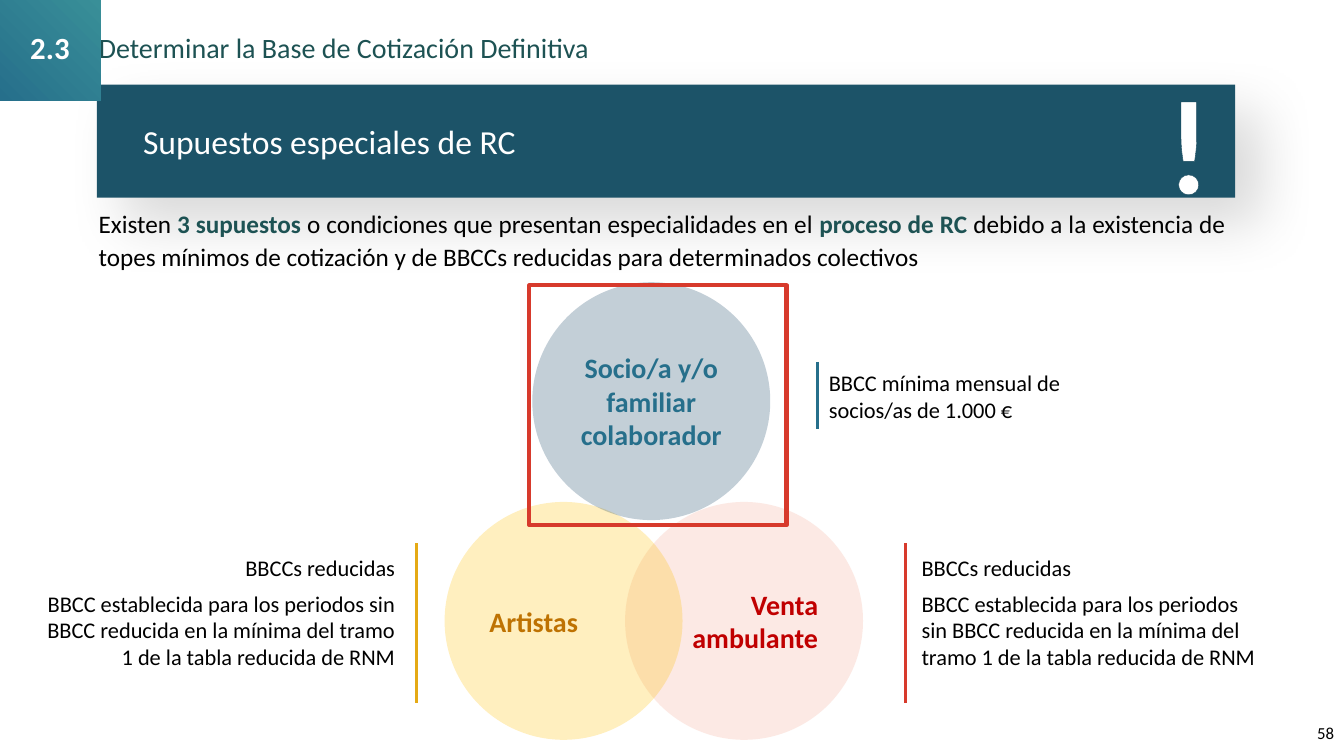
from lxml.etree import SubElement
from pptx import Presentation
from pptx.dml.color import RGBColor
from pptx.enum.shapes import MSO_CONNECTOR, MSO_SHAPE
from pptx.enum.text import MSO_ANCHOR, MSO_AUTO_SIZE, PP_ALIGN
from pptx.oxml import parse_xml
from pptx.oxml.ns import nsdecls, qn
from pptx.util import Inches, Pt

BLACK = RGBColor(0x00, 0x00, 0x00)
WHITE = RGBColor(0xFF, 0xFF, 0xFF)
GREEN = RGBColor(0x1D, 0x52, 0x53)
NAVY = RGBColor(0x1C, 0x53, 0x68)
BLUE = RGBColor(0x26, 0x6F, 0x8B)
TEAL = RGBColor(0x39, 0x8F, 0x98)
RED = RGBColor(0xD7, 0x3A, 0x2C)
GOLD = RGBColor(0xE5, 0xAA, 0x15)
INK = RGBColor(0x12, 0x41, 0x63)
AMBER = RGBColor(0xFF, 0xC0, 0x00)
ROSE = RGBColor(0xF4, 0xAA, 0x96)
BROWN = RGBColor(0xBE, 0x72, 0x02)
WINE = RGBColor(0xC0, 0x00, 0x00)

LEFT, MID, RIGHT = PP_ALIGN.LEFT, PP_ALIGN.CENTER, PP_ALIGN.RIGHT
SIDES = ("margin_left", "margin_top", "margin_right", "margin_bottom")
FLUSH = dict.fromkeys(SIDES, 0)


def apply(item, values):
    for name, value in values.items():
        setattr(item, name, value)


def write(shape, paras, size, align=LEFT, para=None, frame=None):
    area = shape.text_frame
    apply(area, {"word_wrap": True, "auto_size": MSO_AUTO_SIZE.NONE,
                 "vertical_anchor": MSO_ANCHOR.TOP, **(frame or {})})
    for index, runs in enumerate(paras):
        line = area.add_paragraph() if index else area.paragraphs[0]
        apply(line, {"alignment": align, **(para or {})})
        for words, color, bold in runs:
            run = line.add_run()
            run.text = words
            apply(run.font, {"name": "Calibri", "size": Pt(size), "bold": bold})
            run.font.color.rgb = color
    return shape


def label(slide, box, *args, **kwargs):
    shape = slide.shapes.add_textbox(*map(Inches, box))
    return write(shape, *args, **kwargs)


def block(slide, kind, box, color=None):
    shape = slide.shapes.add_shape(kind, *map(Inches, box))
    shape.shadow.inherit = False
    shape.line.fill.background()
    if color is None:
        shape.fill.background()
    else:
        shape.fill.solid()
        shape.fill.fore_color.rgb = color
    return shape


def badge(slide, x, y, w, h):
    half, slant, cut = h / 2, w * 0.21, 0.13
    tips = [(x + slant, y), (x + w - slant, y), (x + w, y + half),
            (x + w - slant, y + h), (x + slant, y + h), (x, y + half)]
    dots = []
    for index, tip in enumerate(tips):
        back, ahead = tips[index - 1], tips[(index + 1) % 6]
        start = [t + (b - t) * cut for t, b in zip(tip, back)]
        stop = [t + (a - t) * cut for t, a in zip(tip, ahead)]
        for step in range(7):
            k = step / 6
            dots.append([(1 - k) ** 2 * s + 2 * k * (1 - k) * t + k * k * e
                         for s, t, e in zip(start, tip, stop)])
    form = slide.shapes.build_freeform(*dots[0], scale=Inches(1))
    form.add_line_segments(dots[1:], close=True)
    shape = form.convert_to_shape()
    shape.shadow.inherit = False
    shape.line.fill.background()
    shape.fill.gradient()
    for stop, color in zip(shape.fill.gradient_stops, (BLUE, TEAL)):
        stop.color.rgb = color
    grad = shape._element.spPr.find(qn("a:gradFill"))
    grad.replace(grad.find(qn("a:lin")), parse_xml(
        f'<a:path {nsdecls("a")} path="circle">'
        '<a:fillToRect t="100000" r="100000"/></a:path>'))
    label(slide, (x + 0.09, y + 0.24, 0.65, 0.3), [[("2.3", WHITE, True)]], 22, MID,
          {"line_spacing": 0.8},
          {"margin_top": 0, "margin_bottom": 0, "vertical_anchor": MSO_ANCHOR.MIDDLE})


def header(slide, x, y, w, h):
    title = slide.shapes.title
    apply(title, dict(zip(("left", "top", "width", "height"), map(Inches, (x, y, w, h)))))
    write(title, [[("Determinar la Base de Cotización Definitiva", GREEN, False)]], 20,
          para={"line_spacing": 0.85, "space_before": 0, "space_after": Pt(6)})
    badge(slide, x - 0.8, y - 0.19, 0.8, 0.69)


def banner(slide, x, y, w, h):
    bar = block(slide, MSO_SHAPE.RECTANGLE, (x, y, w, h), NAVY)
    glow = SubElement(bar._element.spPr.find(qn("a:effectLst")), qn("a:outerShdw"),
                      blurRad=str(Pt(40)), dist=str(Pt(26)), dir="2700000",
                      algn="tl", rotWithShape="0")
    tone = SubElement(glow, qn("a:srgbClr"), val=str(BLACK))
    SubElement(tone, qn("a:alpha"), val="15000")
    label(slide, (x + 0.36, y + 0.15, 9.72, 0.81),
          [[("Supuestos especiales de RC", WHITE, False)]], 24,
          frame={"vertical_anchor": MSO_ANCHOR.MIDDLE})
    mark = label(slide, (x + w - 1.04, y - 0.3, 1.16, 1.72),
                 [[("!", WHITE, True)]], 96, MID)
    font = mark.text_frame.paragraphs[0].runs[0].font
    font._element.insert(0, parse_xml(
        f'<a:ln {nsdecls("a")} w="{Pt(1.75)}"><a:solidFill>'
        '<a:srgbClr val="194A5D"/></a:solidFill></a:ln>'))


def intro(slide, x, y, w, h):
    runs = [("Existen ", BLACK, False), ("3 supuestos ", GREEN, True),
            ("o condiciones que presentan especialidades en el ", BLACK, False),
            ("proceso de RC ", GREEN, True),
            ("debido a la existencia de topes mínimos de cotización y de BBCCs "
             "reducidas para determinados colectivos", BLACK, False)]
    label(slide, (x, y, w, h), [runs], 18, PP_ALIGN.JUSTIFY,
          {"line_spacing": 1.07, "space_after": Pt(8)})


def note(slide, x, y, h, color, gap, w, pad, lines, align=LEFT):
    rule = slide.shapes.add_connector(MSO_CONNECTOR.STRAIGHT,
                                      *map(Inches, (x, y, x, y + h)))
    rule.line.color.rgb = color
    rule.line.width = Pt(2.5)
    SubElement(rule._element.spPr, qn("a:effectLst"))
    left = x - gap - w if align == RIGHT else x + gap
    label(slide, (left, y + pad, w, h - 2 * pad), [[(line, BLACK, False)] for line in lines],
          16, align, {"space_after": Pt(6)}, FLUSH)


def venn(slide, x, y, size):
    drop = 2.18
    discs = [(1.79, drop, ROSE, "Venta ambulante", WINE, RIGHT, {}),
             (0, drop, AMBER, "Artistas", BROWN, LEFT, {}),
             (0.87, 0, INK, "Socio/a y/o familiar colaborador", BLUE, MID, FLUSH)]
    for dx, dy, color, words, tint, align, frame in discs:
        disc = block(slide, MSO_SHAPE.OVAL, (x + dx, y + dy, size, size), color)
        tone = disc._element.spPr.find(qn("a:solidFill"))[0]
        SubElement(tone, qn("a:alpha"), val="25000")
        write(disc, [[(words, tint, True)]], 20, align,
              frame={"vertical_anchor": MSO_ANCHOR.MIDDLE, **frame})
    focus = block(slide, MSO_SHAPE.RECTANGLE, (x + 0.84, y + 0.03, 2.55, 2.38))
    focus.line.color.rgb = RED
    focus.line.width = Pt(3)


def main():
    deck = Presentation()
    deck.slide_width, deck.slide_height = Inches(13.33), Inches(7.5)
    slide = deck.slides.add_slide(deck.slide_layouts[5])
    cuts = ["BBCCs reducidas",
            "BBCC establecida para los periodos sin BBCC reducida en la mínima "
            "del tramo 1 de la tabla reducida de RNM"]
    label(slide, (10.33, 7.07, 3, 0.4), [[("58", BLACK, False)]], 12, RIGHT,
          frame={"vertical_anchor": MSO_ANCHOR.MIDDLE})
    banner(slide, 0.96, 0.84, 11.29, 1.12)
    intro(slide, 0.88, 2, 11.37, 0.73)
    note(slide, 8.11, 3.59, 0.67, BLUE, 0.11, 2.59, 0.07,
         ["BBCC mínima mensual de socios/as de 1.000 €"])
    note(slide, 8.98, 5.39, 1.58, RED, 0.16, 3.36, 0.11, cuts)
    note(slide, 4.13, 5.39, 1.58, GOLD, 0.21, 3.46, 0.11, cuts, RIGHT)
    venn(slide, 4.41, 2.8, 2.36)
    header(slide, 0.88, 0.3, 11.58, 0.39)
    deck.save("out.pptx")


if __name__ == "__main__":
    main()
